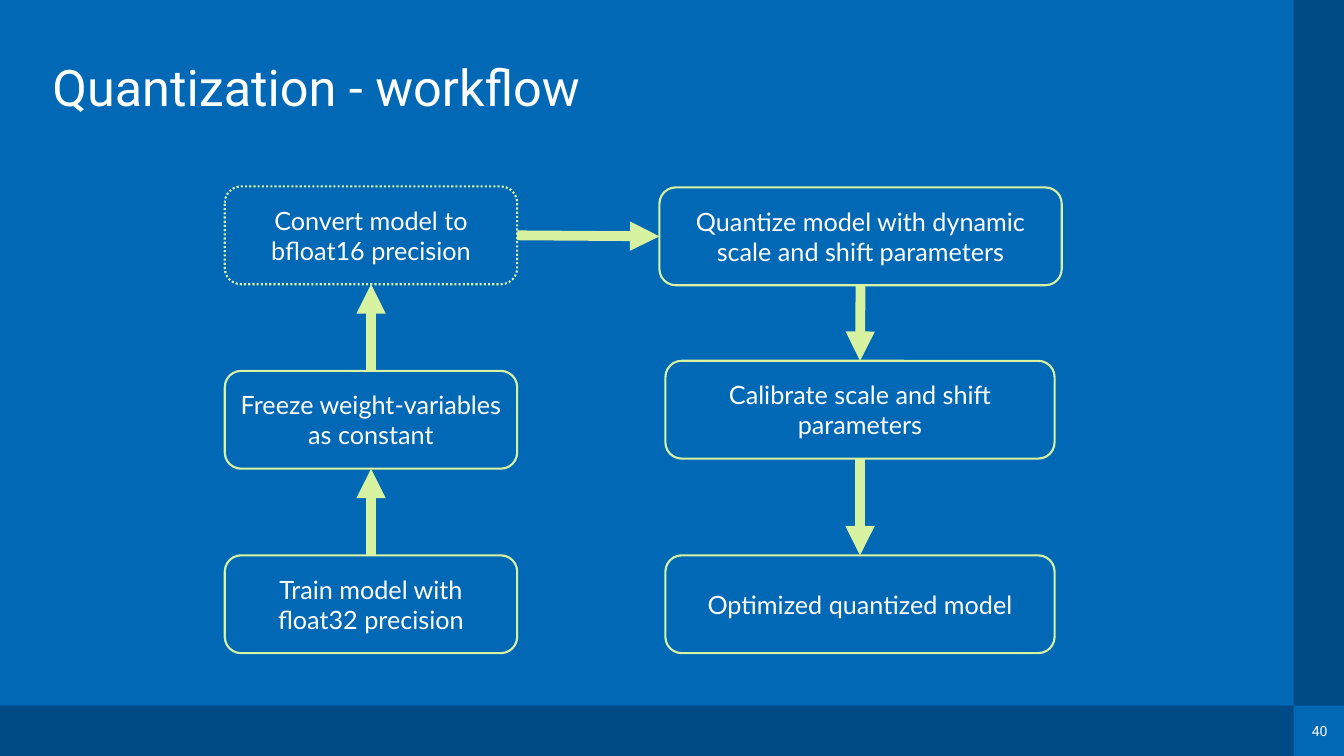
"""Build the quantization workflow slide."""
import pptx
import pptx.dml.color
import pptx.enum.dml
import pptx.enum.shapes
import pptx.enum.text
import pptx.oxml
import pptx.oxml.ns
import pptx.util

Inches = pptx.util.Inches
Pt = pptx.util.Pt
ALIGN = pptx.enum.text.PP_ALIGN
ANCHOR = pptx.enum.text.MSO_ANCHOR
FIT = pptx.enum.text.MSO_AUTO_SIZE
SHAPE = pptx.enum.shapes.MSO_SHAPE
TOP, LEFT, BOTTOM, RIGHT = range(4)


def rgb(value):
    return pptx.dml.color.RGBColor.from_string(value)


def element(tag, **attrs):
    el = pptx.oxml.parse_xml(f"<{tag} {pptx.oxml.ns.nsdecls('a')}/>")
    for name, value in attrs.items():
        el.set(name, value)
    return el


class Deck:
    BACK, BAND, LINE, TEXT = "0068B5", "004A86", "D7F3A2", "FFFFFF"
    HEAD_FONT, BODY_FONT = "Roboto", "Lato"

    def __init__(self):
        self.prs = pptx.Presentation()
        self.prs.slide_width = Inches(13.33)
        self.prs.slide_height = Inches(7.5)
        self.slide = self.prs.slides.add_slide(self.prs.slide_layouts[5])
        fill = self.slide.background.fill
        fill.solid()
        fill.fore_color.rgb = rgb(self.BACK)

    def add_text(self, tf, text, size, font, align):
        p = tf.paragraphs[0]
        p.alignment = align
        r = p.add_run()
        r.text = text
        r.font.size = Pt(size)
        r.font.name = font
        r.font.color.rgb = rgb(self.TEXT)
        return p

    def title(self, text, x, y, w, h):
        sp = self.slide.shapes.title
        sp.left, sp.top, sp.width, sp.height = map(Inches, (x, y, w, h))
        tf = sp.text_frame
        tf.auto_size = FIT.NONE
        tf.vertical_anchor = ANCHOR.MIDDLE
        p = self.add_text(tf, text, 36, self.HEAD_FONT, ALIGN.LEFT)
        p.line_spacing = 0.9

    def number(self, text, x, y, w, h):
        sp = self.slide.shapes.add_textbox(*map(Inches, (x, y, w, h)))
        tf = sp.text_frame
        tf.margin_left = tf.margin_right = tf.margin_top = tf.margin_bottom = 0
        tf.word_wrap = False
        tf.auto_size = FIT.SHAPE_TO_FIT_TEXT
        self.add_text(tf, text, 10, self.HEAD_FONT, ALIGN.CENTER)

    def shape(self, kind, x, y, w, h):
        sp = self.slide.shapes.add_shape(kind, *map(Inches, (x, y, w, h)))
        sp.shadow.inherit = False
        return sp

    def band(self, x, y, w, h):
        sp = self.shape(SHAPE.RECTANGLE, x, y, w, h)
        sp.fill.solid()
        sp.fill.fore_color.rgb = rgb(self.BAND)
        sp.line.fill.background()

    def step(self, text, x, y, w, h=0.97, dotted=False):
        sp = self.shape(SHAPE.ROUNDED_RECTANGLE, x, y, w, h)
        sp.fill.background()
        sp.line.color.rgb = rgb(self.LINE)
        sp.line.width = Pt(1.5)
        if dotted:
            sp.line.dash_style = pptx.enum.dml.MSO_LINE.ROUND_DOT
        tf = sp.text_frame
        tf.word_wrap = True
        tf.vertical_anchor = ANCHOR.MIDDLE
        self.add_text(tf, text, 18, self.BODY_FONT, ALIGN.CENTER)
        return sp

    def arrow(self, start, start_side, end, end_side):
        straight = pptx.enum.shapes.MSO_CONNECTOR.STRAIGHT
        cx = self.slide.shapes.add_connector(straight, 0, 0, 0, 0)
        cx.begin_connect(start, start_side)
        cx.end_connect(end, end_side)
        cx.line.color.rgb = rgb(self.LINE)
        cx.line.width = Pt(7)
        cx.line._get_or_add_ln().append(element("a:tailEnd", type="triangle"))
        cx._element.spPr.append(element("a:effectLst"))


def main():
    deck = Deck()
    deck.band(0, 7, 12.83, 0.5)
    deck.band(12.83, 0, 0.5, 7)
    deck.number("40", 13.01, 7.17, 0.16, 0.17)
    deck.title("Quantization - workflow", 0.42, 0.24, 12, 1.31)

    train = deck.step("Train model with float32 precision", 2.23, 5.51, 2.9)
    freeze = deck.step("Freeze weight-variables as constant", 2.23, 3.68, 2.9)
    convert = deck.step("Convert model to bfloat16 precision", 2.23, 1.85, 2.9, dotted=True)
    quantize = deck.step("Quantize model with dynamic scale and shift parameters", 6.54, 1.86, 3.99)
    calibrate = deck.step("Calibrate scale and shift parameters", 6.6, 3.58, 3.86)
    optimized = deck.step("Optimized quantized model", 6.6, 5.51, 3.86)

    deck.arrow(train, TOP, freeze, BOTTOM)
    deck.arrow(freeze, TOP, convert, BOTTOM)
    deck.arrow(convert, RIGHT, quantize, LEFT)
    deck.arrow(quantize, BOTTOM, calibrate, TOP)
    deck.arrow(calibrate, BOTTOM, optimized, TOP)

    deck.prs.save("out.pptx")


if __name__ == "__main__":
    main()
